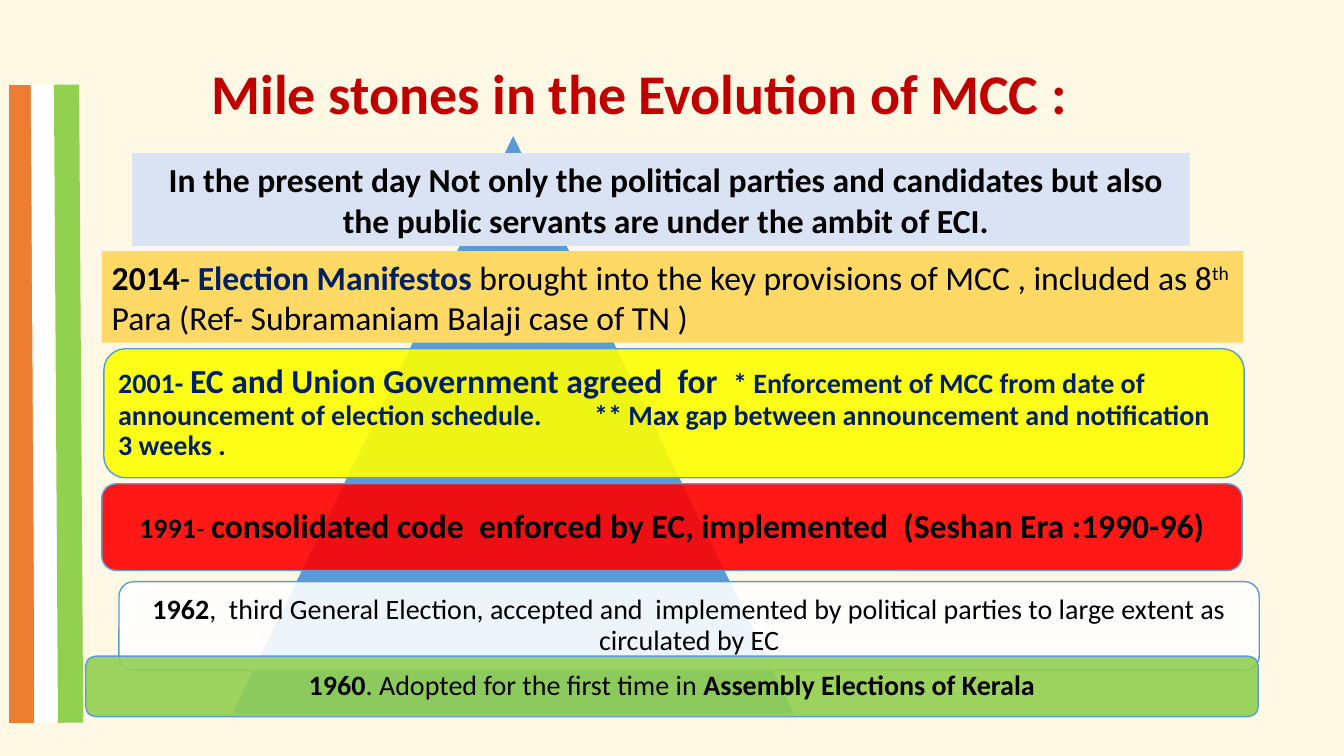
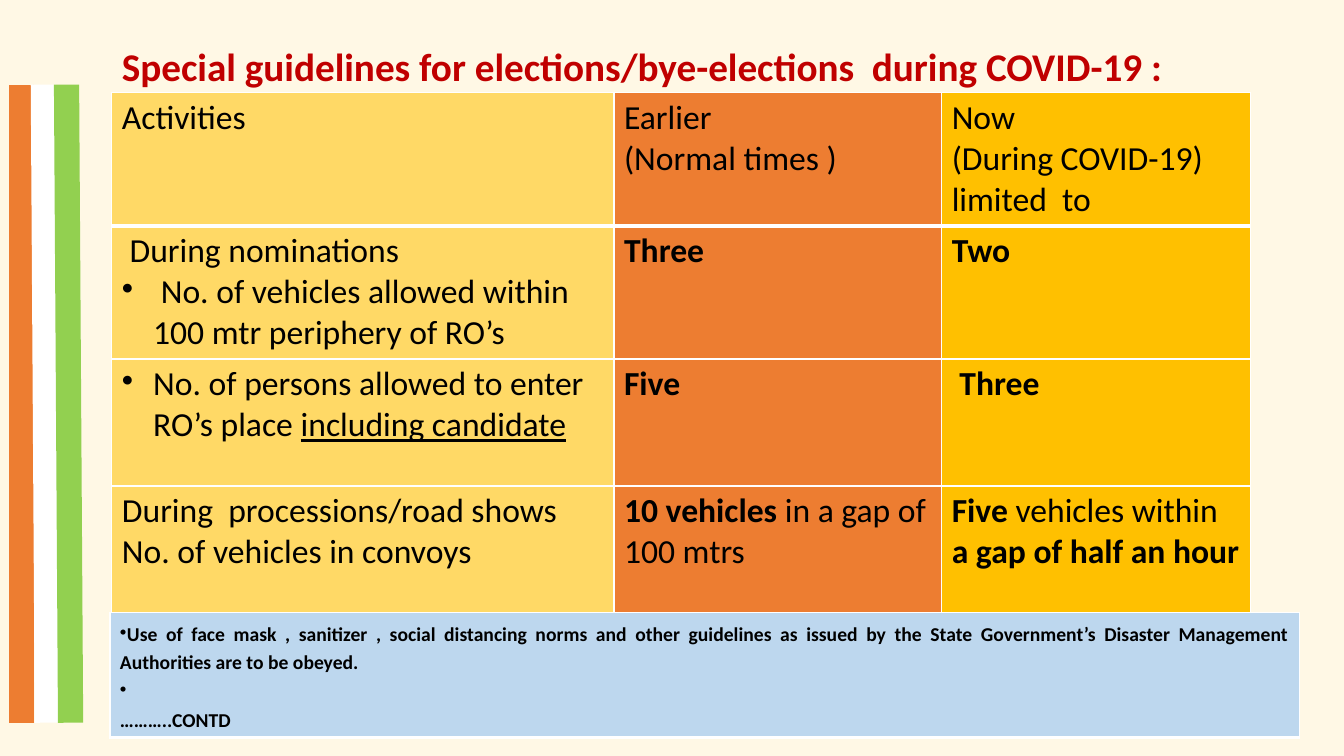
from dataclasses import dataclass

from lxml import etree
from pptx import Presentation
from pptx import util as u
from pptx.dml.color import RGBColor
from pptx.enum import shapes, text
from pptx.oxml.ns import qn

PX = 9144  # 100 px to the inch
FORM = shapes.MSO_SHAPE
MID = text.PP_ALIGN.CENTER
JUST = text.PP_ALIGN.JUSTIFY


@dataclass(frozen=True)
class Theme:
    font: str = "Calibri"
    page: str = "FFF8E5"
    title: str = "C00000"
    ink: str = "000000"
    navy: str = "002060"
    white: str = "FFFFFF"
    blue: str = "5B9BD5"
    orange: str = "ED7D31"
    green: str = "92D050"
    yellow: str = "FFFF00"
    red: str = "FF0000"
    sand: str = "FFD966"
    gold: str = "FFC000"
    pale: str = "DAE3F3"
    sky: str = "BDD7EE"
    head: int = 40
    sub: int = 28
    body: int = 24
    small: int = 20
    note: int = 14


T = Theme()
BOLD = {"bold": True}
NAVY = {"bold": True, "color": T.navy}
BIG = {"bold": True, "size": T.body}


def px(*nums):
    return [u.Emu(n * PX) for n in nums]


def rgb(code):
    return RGBColor.from_string(code)


def node(parent, tag, **attrs):
    return etree.SubElement(parent, qn(tag), attrs)


def paint(fill, code):
    fill.solid()
    fill.fore_color.rgb = rgb(code)


def style(font, form):
    for key, val in form.items():
        if key == "color":
            font.color.rgb = rgb(val)
        else:
            setattr(font, key, u.Pt(val) if key == "size" else val)


def para(*runs, indent=None, bullet=False, tab=None, **form):
    """Describe a paragraph; a run is a string or a (string, format) pair."""
    return runs, indent, bullet, tab, form


def write(frame, paras, size, **base):
    """Fill a text frame; a line feed starts a new line in its paragraph."""
    base = {"name": T.font, "size": size, "color": T.ink, "bold": False, **base}
    for i, (runs, indent, bullet, tab, form) in enumerate(paras):
        p = frame.add_paragraph() if i else frame.paragraphs[0]
        props = p._p.get_or_add_pPr()
        if indent:
            for key, val in zip(("marL", "indent"), px(*indent)):
                props.set(key, str(val))
        if bullet:
            node(props, "a:buChar", char="•")
        if tab:
            stops = node(props, "a:tabLst")
            node(stops, "a:tab", pos=str(tab * PX), algn="l")
        for key, val in {"alignment": text.PP_ALIGN.LEFT, **form}.items():
            setattr(p, key, val)
        for item in runs:
            words, extra = (item, {}) if isinstance(item, str) else item
            if words == "\n":
                p.add_line_break()
                node(p._p[-1], "a:rPr", sz=str(size * 100))
                continue
            extra = dict(extra)
            lift = extra.pop("lift", None)
            run = p.add_run()
            run.text = words
            style(run.font, {**base, **extra})
            if lift:
                run._r.get_or_add_rPr().set("baseline", str(lift * 1000))


def rails(slide):
    """Three upright stripes at the left edge."""
    for top, low, hue in ((21, 21, T.orange), (43, 47, T.white), (66, 70, T.green)):
        rail = slide.shapes.add_connector(
            shapes.MSO_CONNECTOR.STRAIGHT, *px(top, 84, low, 717))
        rail.line.color.rgb = rgb(hue)
        rail.line.width = u.Pt(18)
        node(rail._element.spPr, "a:effectLst")


def title(slide, box, words, size, align):
    frame = slide.shapes.add_textbox(*px(*box)).text_frame
    frame.word_wrap = True
    write(frame, [para(words, alignment=align)], size, color=T.title, bold=True)


def shape(slide, kind, box, hue, edge=None, alpha=None):
    item = slide.shapes.add_shape(kind, *px(*box))
    item.shadow.inherit = False
    paint(item.fill, hue)
    if alpha:
        tint = item._element.spPr.find(qn("a:solidFill"))[0]
        node(tint, "a:alpha", val=str(alpha * 1000))
    if edge:
        item.line.color.rgb = rgb(edge)
        item.line.width = u.Pt(1)
    else:
        item.line.fill.background()
    return item


def step(slide, box, hue, line):
    """Rounded, slightly clear bar holding one milestone."""
    frame = shape(slide, FORM.ROUNDED_RECTANGLE, box, hue, T.blue, 90).text_frame
    form = {"word_wrap": True, "vertical_anchor": text.MSO_ANCHOR.MIDDLE}
    form.update((f"margin_{side}", px(8)[0])
                for side in ("left", "top", "right", "bottom"))
    for key, val in form.items():
        setattr(frame, key, val)
    write(frame, [line], T.small)


def band(slide, box, hue, line):
    frame = shape(slide, FORM.RECTANGLE, box, hue).text_frame
    frame.word_wrap = True
    write(frame, [line], T.body)


def edges(cell, **widths):
    """White cell borders, 1 pt unless a side says otherwise."""
    props = cell._tc.get_or_add_tcPr()
    for side in "LRTB":
        line = node(props, f"a:ln{side}", w=str(u.Pt(widths.get(side, 1))))
        node(node(line, "a:solidFill"), "a:srgbClr", val=T.white)


def grid(slide, spot, cols, rows, hues, cells, size, rule):
    """Table with one fill per column and a thick rule below the first row."""
    table = slide.shapes.add_table(
        len(rows), len(cols), *px(*spot, sum(cols), sum(rows))).table
    table.first_row = table.horz_banding = False
    for col, wide in zip(table.columns, px(*cols)):
        col.width = wide
    for row, tall in zip(table.rows, px(*rows)):
        row.height = tall
    for r, line in enumerate(cells):
        for c, paras in enumerate(line):
            cell = table.cell(r, c)
            edges(cell, **{0: {"B": rule}, 1: {"T": rule}}.get(r, {}))
            paint(cell.fill, hues[c])
            write(cell.text_frame, paras, size)


def miles(slide):
    title(slide, (157, 53, 954, 77), "Mile stones in the Evolution of MCC :",
          T.head, MID)
    shape(slide, FORM.ISOSCELES_TRIANGLE, (229, 133, 560, 576), T.blue, T.white)
    mid = {"alignment": MID, "line_spacing": 0.9}
    steps = (
        ((103, 346, 1131, 128), T.yellow, para(
            ("2001- ", NAVY),
            ("EC and Union Government agreed  for  ", {**NAVY, "size": T.body}),
            ("* Enforcement of MCC from date of announcement of election "
             "schedule.\t** Max gap between announcement and notification  "
             "3 weeks .", NAVY), tab=472, line_spacing=0.9)),
        ((101, 480, 1131, 86), T.red, para(
            ("1991", BOLD), "- ",
            ("consolidated code  enforced by EC, implemented  "
             "(Seshan Era :1990-96)", BIG), **mid)),
        ((118, 577, 1131, 88), T.white, para(
            ("1962", BOLD),
            ",  third General Election, accepted and  implemented by political "
            "parties to large extent as circulated by EC", **mid)),
        ((85, 651, 1163, 60), T.green, para(
            ("1960", BOLD), ". Adopted for the first time in ",
            ("Assembly Elections of Kerala", BOLD), **mid)),
    )
    for box, hue, line in steps:
        step(slide, box, hue, line)
    band(slide, (131, 152, 1049, 92), T.pale, para(
        ("In the present day Not only the political parties and candidates but "
         "also the public servants are under the ambit of ECI.", BOLD),
        indent=(10, 0), alignment=MID))
    band(slide, (101, 249, 1132, 91), T.sand, para(
        ("2014", BOLD), "- ", ("Election Manifestos ", NAVY),
        "brought into the key provisions of MCC , included as 8",
        ("th", {"lift": 30}), " Para (Ref- Subramaniam Balaji case of TN )"))


def rules(slide):
    dot = {"indent": (31, -31), "bullet": True}
    cells = (
        ([para("Activities")],
         [para("Earlier"), para("(Normal times )")],
         [para("Now"), para("(During COVID-19)"), para("limited  to")]),
        ([para(" During nominations"),
          para(" No. of vehicles allowed within 100 mtr periphery of RO’s", **dot)],
         [para(("Three", BOLD))], [para(("Two", BOLD))]),
        ([para("No. of persons allowed to enter RO’s place ",
               ("including candidate", {"underline": True}), **dot)],
         [para(("Five", BOLD))], [para((" Three", BOLD))]),
        ([para("During  processions/road shows"),
          para("No. of vehicles in convoys")],
         [para(("10 vehicles ", BOLD), "in a gap of 100 mtrs")],
         [para(("Five", BOLD), " vehicles within ",
               ("a gap of half an hour", BOLD))]),
    )
    grid(slide, (111, 92), (498, 325, 306), (132, 132, 126, 126),
         (T.sand, T.orange, T.gold), cells, T.body, 3)
    item = {"indent": (0, 0), "bullet": True, "alignment": JUST,
            "line_spacing": 1.2}
    notes = [
        para(("Use of face mask , sanitizer , social distancing norms and other "
              "guidelines as issued by the State Government’s Disaster "
              "Management Authorities are to be obeyed.", BOLD), **item),
        para("\n", ("………..CONTD", BOLD), **item),
    ]
    grid(slide, (109, 608), (1180,), (122,), (T.sky,), [[notes]], T.note, 3)
    title(slide, (111, 37, 1139, 57),
          "Special guidelines for elections/bye-elections  during COVID-19 :",
          T.sub, text.PP_ALIGN.LEFT)


def main():
    deck = Presentation()
    deck.slide_width, deck.slide_height = px(1333, 750)
    paint(deck.slide_master.background.fill, T.page)
    for build in (miles, rules):
        slide = deck.slides.add_slide(deck.slide_layouts[6])
        rails(slide)
        build(slide)
    deck.save("out.pptx")


if __name__ == "__main__":
    main()
